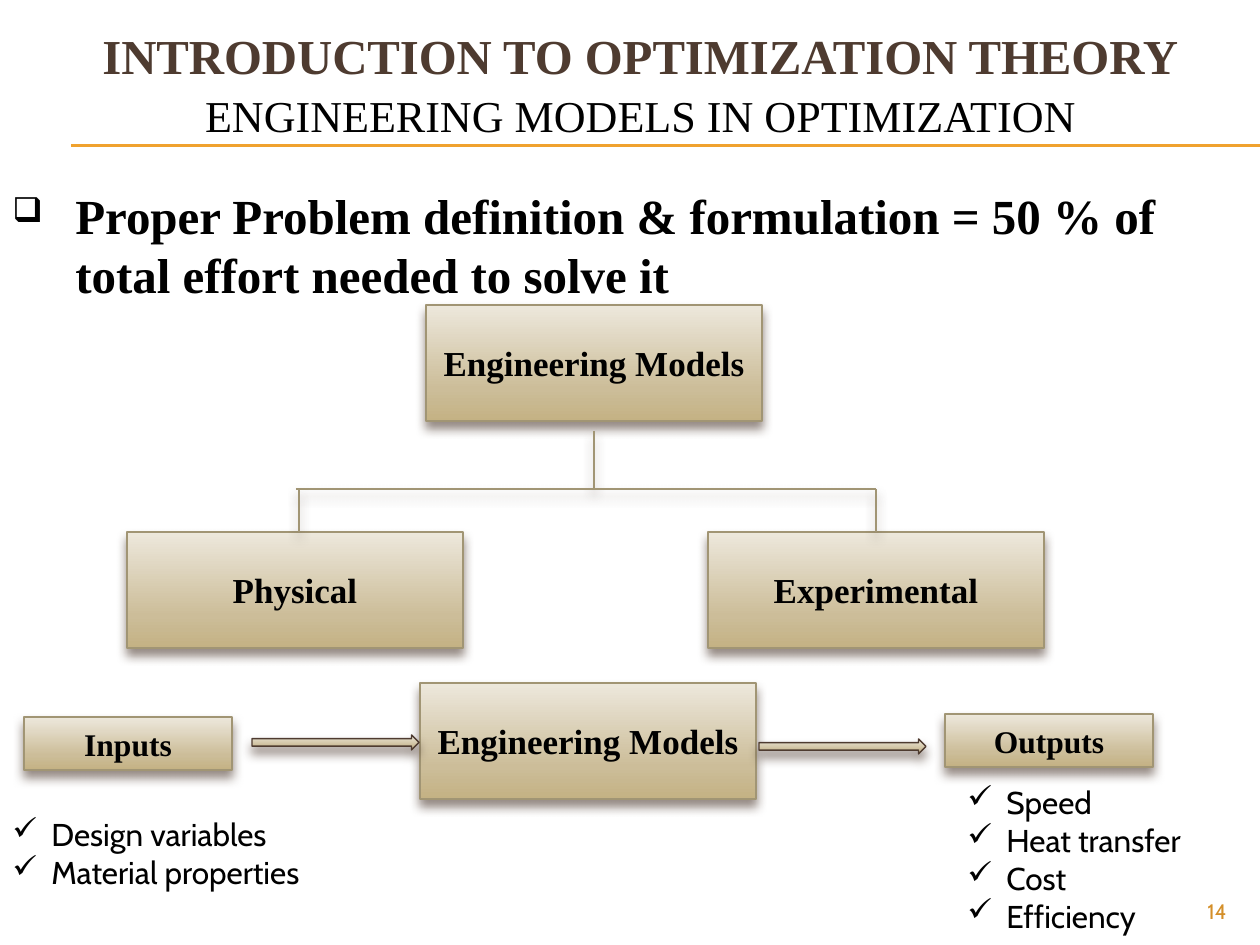
"""Build the engineering models slide."""
from lxml import etree
from pptx import Presentation
from pptx import util as u
from pptx.dml.color import RGBColor
from pptx.enum import shapes, text
from pptx.oxml.ns import qn

BROWN = RGBColor(0x4E, 0x3B, 0x30)
BLACK = RGBColor(0, 0, 0)
GOLD = RGBColor(0xF0, 0xA2, 0x2E)
DARK_GOLD = RGBColor(0xD4, 0x8F, 0x29)
EDGE = RGBColor(0xA1, 0x95, 0x74)
SAND = (
    (0, RGBColor(0xED, 0xE8, 0xDC)),
    (72, RGBColor(0xCC, 0xBD, 0x99)),
    (100, RGBColor(0xC4, 0xB2, 0x84)),
)
SERIF, SANS = "Times New Roman", "Cabin"
CENTER, RIGHT = text.PP_ALIGN.CENTER, text.PP_ALIGN.RIGHT
RECT, ARROW = shapes.MSO_SHAPE.RECTANGLE, shapes.MSO_SHAPE.RIGHT_ARROW
EMU_PER_PX = 914400 / 126


def px(n):
    return u.Emu(round(n * EMU_PER_PX))


def child(parent, tag, **attrs):
    return etree.SubElement(parent, qn(tag), {k: str(v) for k, v in attrs.items()})


class Deck:
    def __init__(self):
        self.prs = Presentation()
        self.prs.slide_width, self.prs.slide_height = px(1260), px(945)
        self.s = self.prs.slides.add_slide(self.prs.slide_layouts[6])

    def font(self, target, size, name=SERIF, color=BLACK, bold=False):
        f = target.font
        f.size, f.name, f.bold = u.Pt(size), name, bold
        f.color.rgb = color

    def effects(self, sp, shadow=True):
        effects = child(sp._element.spPr, "a:effectLst")
        if shadow:
            outer = child(effects, "a:outerShdw", blurRad=u.Pt(6), dist=u.Pt(4),
                          dir=5400000, rotWithShape=0)
            color = child(outer, "a:srgbClr", val=BROWN)
            child(color, "a:alpha", val=60000)

    def gradient(self, sp):
        sp.fill.gradient()
        sp.fill.gradient_angle = 270
        stops = sp._element.spPr.find(qn("a:gradFill")).find(qn("a:gsLst"))
        for stop in list(stops):
            stops.remove(stop)
        for pos, color in SAND:
            child(child(stops, "a:gs", pos=pos * 1000), "a:srgbClr", val=color)

    def shape(self, kind, x, y, w, h, label="", size=20, edge=EDGE):
        sp = self.s.shapes.add_shape(kind, px(x), px(y), px(w), px(h))
        self.gradient(sp)
        sp.line.color.rgb, sp.line.width = edge, u.Pt(0.79)
        self.effects(sp)
        if label:
            tf = sp.text_frame
            tf.vertical_anchor = text.MSO_ANCHOR.MIDDLE
            p = tf.paragraphs[0]
            p.text, p.alignment = label, CENTER
            self.font(p, size, bold=True)
        return sp

    def line(self, x1, y1, x2, y2, color=EDGE, width=0.79, shadow=True):
        cx = self.s.shapes.add_connector(
            shapes.MSO_CONNECTOR.STRAIGHT, px(x1), px(y1), px(x2), px(y2))
        cx.line.color.rgb, cx.line.width = color, u.Pt(width)
        self.effects(cx, shadow)
        return cx

    def box(self, x, y, w, h):
        tf = self.s.shapes.add_textbox(px(x), px(y), px(w), px(h)).text_frame
        tf.word_wrap = True
        return tf

    def title(self, x, y, w, h, first, second):
        tf = self.box(x, y, w, h)
        tf.vertical_anchor = text.MSO_ANCHOR.MIDDLE
        p = tf.paragraphs[0]
        p.alignment, p.line_spacing = CENTER, 1.08
        r = p.add_run()
        r.text = first
        self.font(r, 27.9, color=BROWN, bold=True)
        p.add_line_break()
        r = p.add_run()
        r.text = second
        self.font(r, 25.2)

    def number(self, x, y, w, h, value):
        p = self.box(x, y, w, h).paragraphs[0]
        p.text, p.alignment = value, RIGHT
        self.font(p, 12, SANS, DARK_GOLD)

    def bullets(self, x, y, w, h, items, mark="✓", indent=39, scale=100,
                size=18, name=SANS, bold=False):
        tf = self.box(x, y, w, h)
        for i, item in enumerate(items):
            p = tf.add_paragraph() if i else tf.paragraphs[0]
            p.text = item
            self.font(p, size, name, bold=bold)
            pPr = p._p.get_or_add_pPr()
            pPr.set("marL", str(px(indent)))
            pPr.set("indent", str(-px(indent)))
            char = etree.Element(qn("a:buChar"), char=mark)
            bullet_size = etree.Element(qn("a:buSzPct"), val=str(scale * 1000))
            pPr.insert(0, bullet_size)
            bullet_size.addnext(char)


def main():
    d = Deck()
    for y in (145, 146):
        d.line(71, y, 1260, y, GOLD, 0.75, shadow=False)
    d.title(42, 13, 1197, 136, "INTRODUCTION TO OPTIMIZATION THEORY",
            "ENGINEERING MODELS IN OPTIMIZATION")
    d.number(1134, 892, 105, 34, "14")

    d.shape(RECT, 426, 305, 336, 116, "Engineering Models")
    experimental = d.shape(RECT, 708, 532, 336, 116, "Experimental")
    d.shape(RECT, 127, 532, 336, 116, "Physical")
    d.line(594, 431, 594, 489)
    d.line(296, 489, 876, 489)
    d.line(299, 489, 299, 532)
    d.line(876, 489, 876, 532).end_connect(experimental, 0)

    d.bullets(0, 179, 1260, 131,
              ["Proper Problem definition & formulation = 50 % of "
               "total effort needed to solve it"],
              mark="❑", indent=63, scale=70, size=28, name=SERIF, bold=True)

    d.shape(RECT, 420, 683, 336, 116, "Engineering Models")
    for x, y in ((252, 735), (759, 739)):
        d.shape(ARROW, x, y, 167, 15, edge=BROWN)
    for x, y, label in ((24, 717, "Inputs"), (945, 714, "Outputs")):
        d.shape(RECT, x, y, 208, 53, label, size=18)
    d.bullets(0, 809, 325, 89, ["Design variables", "Material properties"])
    d.bullets(955, 777, 284, 165, ["Speed", "Heat transfer", "Cost", "Efficiency"])
    d.prs.save("out.pptx")


if __name__ == "__main__":
    main()
